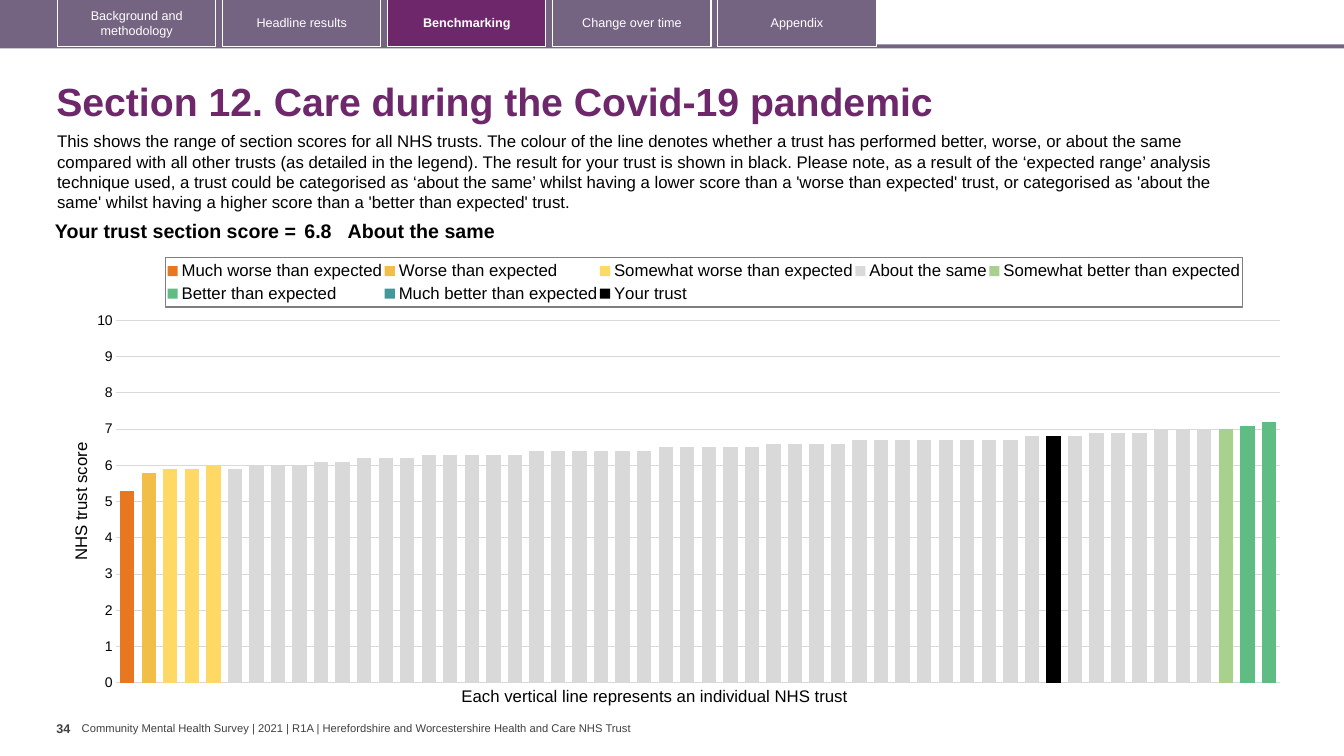
from copy import deepcopy

from lxml import etree
from pptx import Presentation
from pptx import util as u
from pptx.chart import data
from pptx.dml import color
from pptx.enum import chart as ch
from pptx.enum import shapes, text
from pptx.oxml import ns

RGB = color.RGBColor
PLUM = RGB(0x6D, 0x27, 0x6A)
MAUVE = RGB(0x75, 0x63, 0x82)
WHITE = RGB(0xFF, 0xFF, 0xFF)
BLACK = RGB(0, 0, 0)
DARK = RGB(0x40, 0x40, 0x40)
GREY = RGB(0x7F, 0x7F, 0x7F)
PALE = RGB(0xD9, 0xD9, 0xD9)

TABS = ["Background and methodology", "Headline results", "Benchmarking",
        "Change over time", "Appendix"]
INTRO = (
    "This shows the range of section scores for all NHS trusts. The colour of "
    "the line denotes whether a trust has performed better, worse, or about "
    "the same compared with all other trusts (as detailed in the legend). The "
    "result for your trust is shown in black. Please note, as a result of the "
    "‘expected range’ analysis technique used, a trust could be categorised as "
    "‘about the same’ whilst having a lower score than a 'worse than expected' "
    "trust, or categorised as 'about the same' whilst having a higher score "
    "than a 'better than expected' trust.")
COUNT = 54
RUNS = [(5.9, 1), (6, 3), (6.1, 2), (6.2, 3), (6.3, 5), (6.4, 6), (6.5, 5),
        (6.6, 4), (6.7, 8), (6.8, 3), (6.9, 3), (7, 3)]
SAME = [score for score, times in RUNS for _ in range(times)]
BANDS = [
    ("Much worse than expected", 0, [5.3], RGB(0xE8, 0x77, 0x22)),
    ("Worse than expected", 1, [5.8], RGB(0xF1, 0xBE, 0x48)),
    ("Somewhat worse than expected", 2, [5.9, 5.9, 6], RGB(0xFF, 0xD9, 0x66)),
    ("About the same", 5, SAME, PALE),
    ("Somewhat better than expected", 51, [7], RGB(0xA9, 0xD1, 0x8E)),
    ("Better than expected", 52, [7.1, 7.2], RGB(0x5F, 0xBD, 0x83)),
    ("Much better than expected", 54, [], RGB(0x41, 0x99, 0x99)),
    ("Your trust", 43, [6.8], BLACK),
]


def apply(obj, **form):
    for key, value in form.items():
        setattr(obj, key, value)


def style(font, size, shade=BLACK, bold=False):
    apply(font, name="Arial", size=u.Pt(size), bold=bold)
    font.color.rgb = shade


def write(frame, words, size, shade=BLACK, bold=False, align=None):
    para = frame.paragraphs[0]
    para.alignment = align
    run = para.add_run()
    run.text = words
    style(run.font, size, shade, bold)
    return para


def label(slide, box, words, size, shade=BLACK, bold=False, **form):
    frame = slide.shapes.add_textbox(*map(u.Cm, box)).text_frame
    apply(frame, **{"word_wrap": True, **form})
    return write(frame, words, size, shade, bold)


def block(slide, box, fill=None, line=None):
    rect = slide.shapes.add_shape(shapes.MSO_SHAPE.RECTANGLE, *map(u.Cm, box))
    rect.shadow.inherit = False
    if fill is None:
        rect.fill.background()
    else:
        rect.fill.solid()
        rect.fill.fore_color.rgb = fill
    if line is None:
        rect.line.fill.background()
    else:
        rect.line.color.rgb = line
        rect.line.width = u.Pt(0.75)
    return rect


def menu(slide):
    block(slide, (0, 1.12, 33.87, 0.1), MAUVE)
    block(slide, (0, 0, 22.1, 1.19), MAUVE)
    for i, name in enumerate(TABS):
        here = name == "Benchmarking"
        tab = block(slide, (1.45 + 4.16 * i, -0.02, 3.99, 1.19),
                    PLUM if here else None, WHITE)
        apply(tab.text_frame, word_wrap=True,
              vertical_anchor=text.MSO_ANCHOR.MIDDLE)
        write(tab.text_frame, name, 9, WHITE, here, text.PP_ALIGN.CENTER)


def score(slide):
    box = map(u.Cm, (0.89, 5.46, 29.69, 0.79))
    table = slide.shapes.add_table(1, 3, *box).table
    apply(table, first_row=False, horz_banding=False)
    cells = [("Your trust section score =", 6.68, 0.1, text.PP_ALIGN.RIGHT),
             ("6.8", 1.19, 0.1, None), ("About the same", 21.82, 0, None)]
    for i, (words, width, side, align) in enumerate(cells):
        table.columns[i].width = u.Cm(width)
        cell = table.cell(0, i)
        cell.fill.background()
        apply(cell, margin_left=u.Cm(side), margin_right=u.Cm(side),
              margin_top=u.Cm(0.1), margin_bottom=u.Cm(0.1))
        write(cell.text_frame, words, 14, BLACK, True, align)


def place(parent, spot, x, y, w, h, inner=False):
    for old in parent.findall(ns.qn("c:layout")):
        parent.remove(old)
    layout = etree.Element(ns.qn("c:layout"))
    manual = etree.SubElement(layout, ns.qn("c:manualLayout"))
    parts = [("layoutTarget", "inner")] if inner else []
    parts += [("xMode", "edge"), ("yMode", "edge"),
              ("x", x), ("y", y), ("w", w), ("h", h)]
    for tag, value in parts:
        etree.SubElement(manual, ns.qn("c:" + tag)).set("val", str(value))
    parent.insert(spot, layout)


def split(area):
    first = area.find(ns.qn("c:barChart"))
    second = deepcopy(first)
    for ser in second.findall(ns.qn("c:ser"))[:-1]:
        second.remove(ser)
    first.remove(first.findall(ns.qn("c:ser"))[-1])
    first.addnext(second)
    cat = deepcopy(area.find(ns.qn("c:catAx")))
    val = deepcopy(area.find(ns.qn("c:valAx")))
    for tag in ("c:majorGridlines", "c:title"):
        val.remove(val.find(ns.qn(tag)))
    val.find(ns.qn("c:axPos")).set("val", "r")
    val.find(ns.qn("c:tickLblPos")).set("val", "none")
    val.find(ns.qn("c:crosses")).set("val", "max")
    for axis, own, other in ((cat, "901", "902"), (val, "902", "901")):
        axis.find(ns.qn("c:axId")).set("val", own)
        axis.find(ns.qn("c:crossAx")).set("val", other)
    for ref, own in zip(second.findall(ns.qn("c:axId")), ("901", "902")):
        ref.set("val", own)
    area.find(ns.qn("c:valAx")).addnext(val)
    val.addprevious(cat)


def graph(slide):
    facts = data.CategoryChartData(number_format="0.0")
    facts.categories = [str(i + 1) for i in range(COUNT)]
    for name, start, vals, _ in BANDS:
        rest = COUNT - start - len(vals)
        facts.add_series(name, [None] * start + vals + [None] * rest)
    box = map(u.Cm, (1.7, 6.27, 30.86, 11.28))
    chart = slide.shapes.add_chart(
        ch.XL_CHART_TYPE.COLUMN_CLUSTERED, *box, facts).chart
    apply(chart, has_title=False, has_legend=True)
    style(chart.font, 10)
    plot = chart.plots[0]
    apply(plot, gap_width=50, overlap=100, vary_by_categories=False)
    for ser, band in zip(plot.series, BANDS):
        ser.format.fill.solid()
        ser.format.fill.fore_color.rgb = band[3]
        ser.invert_if_negative = False

    chart.category_axis.visible = False
    axis = chart.value_axis
    apply(axis, minimum_scale=0, maximum_scale=10, major_unit=1,
          major_tick_mark=ch.XL_TICK_MARK.NONE, has_major_gridlines=True)
    axis.format.line.fill.background()
    grid = axis.major_gridlines.format.line
    grid.color.rgb = PALE
    grid.width = u.Pt(0.75)
    style(axis.tick_labels.font, 10)
    apply(axis.tick_labels, number_format="0", number_format_is_linked=False)
    write(axis.axis_title.text_frame, "NHS trust score", 12)

    legend = chart.legend
    apply(legend, position=ch.XL_LEGEND_POSITION.TOP, include_in_layout=False)
    style(legend.font, 12)
    key = chart.element.find(".//" + ns.qn("c:legend"))
    place(key, 1, 0.08, 0.02, 0.88, 0.11)
    props = etree.Element(ns.qn("c:spPr"))
    line = etree.SubElement(props, ns.qn("a:ln"), w="9525")
    fill = etree.SubElement(line, ns.qn("a:solidFill"))
    etree.SubElement(fill, ns.qn("a:srgbClr"), val=str(GREY))
    key.find(ns.qn("c:txPr")).addprevious(props)
    area = chart.element.find(".//" + ns.qn("c:plotArea"))
    place(area, 0, 0.04, 0.16, 0.95, 0.81, True)
    split(area)


def main():
    deck = Presentation()
    apply(deck, slide_width=u.Cm(33.87), slide_height=u.Cm(19.05))
    slide = deck.slides.add_slide(deck.slide_layouts[6])
    flat = dict(margin_left=0, margin_right=0, word_wrap=False)
    mid = text.MSO_ANCHOR.MIDDLE
    label(slide, (2.06, 18.19, 14.05, 0.33),
          "Community Mental Health Survey | 2021 | R1A | "
          "Herefordshire and Worcestershire Health and Care NHS Trust",
          8, DARK, margin_top=0, margin_bottom=0, vertical_anchor=mid, **flat)
    menu(slide)
    head = label(slide, (1.17, 1.7, 31.72, 1.83),
                 "Section 12. Care during the Covid-19 pandemic",
                 28, PLUM, True, vertical_anchor=mid)
    head.line_spacing = 0.9
    label(slide, (1.42, 18.03, 0.64, 1.02), "34", 9, DARK, True, **flat)
    label(slide, (1.19, 3.18, 30.75, 2.31), INTRO, 12)
    graph(slide)
    label(slide, (11.38, 17.15, 10.44, 0.76),
          "Each vertical line represents an individual NHS trust", 12,
          word_wrap=False)
    score(slide)
    deck.save("out.pptx")


if __name__ == "__main__":
    main()
